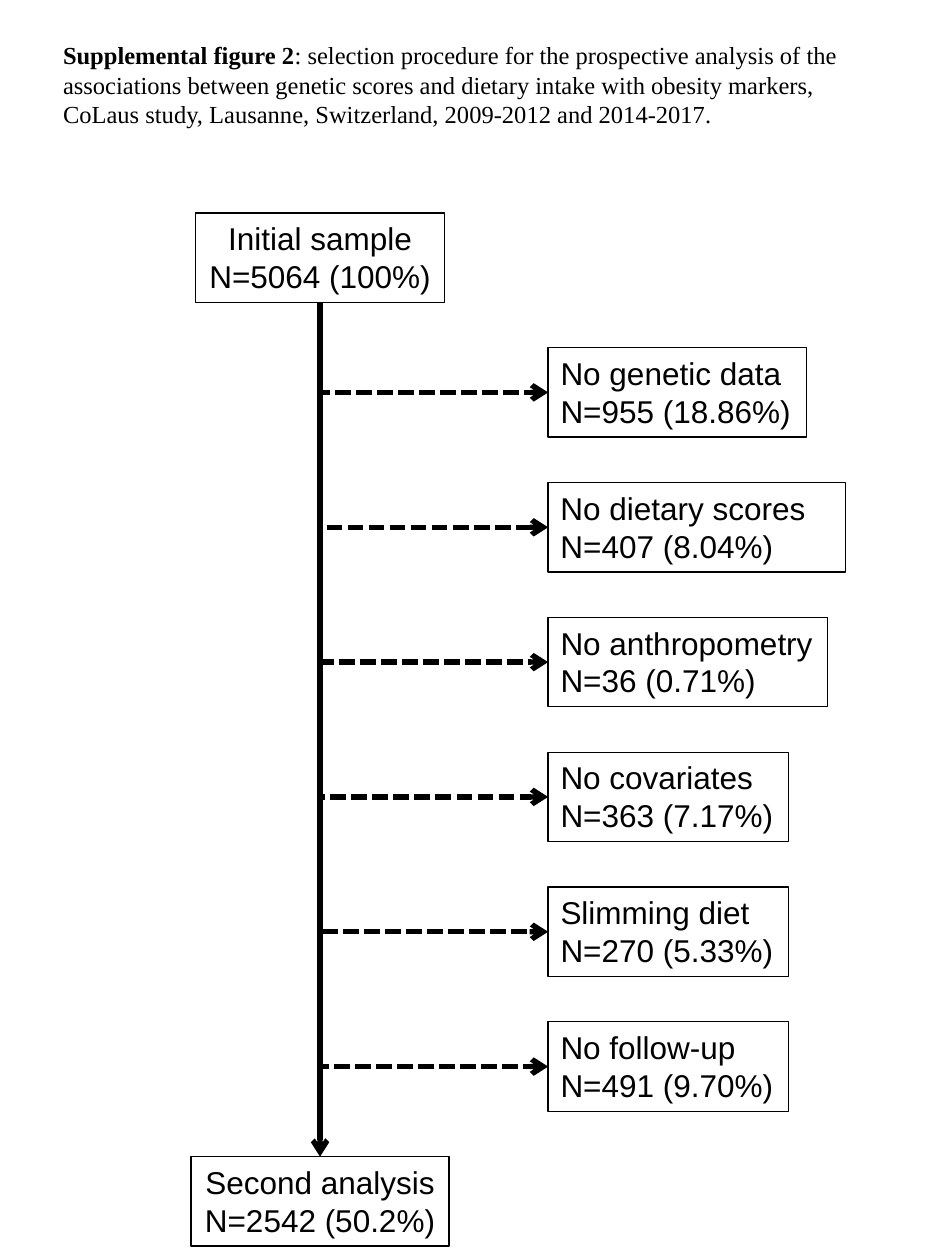
from pptx import Presentation
from pptx.dml.color import RGBColor as Rgb
from pptx.enum.dml import MSO_LINE as Dash
from pptx.enum.shapes import MSO_CONNECTOR as Link, MSO_SHAPE as Shape
from pptx.enum.text import MSO_ANCHOR as Anchor, MSO_AUTO_SIZE as Fit, PP_ALIGN as Align
from pptx.oxml.ns import qn
from pptx.util import Inches, Pt
from lxml.etree import SubElement as Sub

HUES = {"ink": "000000", "page": "FFFFFF"}
INK = Rgb.from_string(HUES["ink"])
PAGE = (7.5, 10)
TOP, STEP, TALL = 1.69, 1.07, 0.71   # rows of the flow chart
AXIS, SIDE = 2.54, 4.35              # middle of main column, left of exits
BOTTOM, LEFT, TIP = 2, 1, 0          # connection sites of a box

HEAD = ("Supplemental figure 2",
        ": selection procedure for the prospective analysis of the associations "
        "between genetic scores and dietary intake with obesity markers, CoLaus "
        "study, Lausanne, Switzerland, 2009-2012 and 2014-2017.")
FIRST = ("Initial sample", "N=5064 (100%)", 1.98)
LAST = ("Second analysis", "N=2542 (50.2%)", 2.05)
EXITS = [
    ("No genetic data", "N=955 (18.86%)", 2.05),
    ("No dietary scores", "N=407 (8.04%)", 2.36),
    ("No anthropometry", "N=36 (0.71%)", 2.22),
    ("No covariates", "N=363 (7.17%)", 1.91),
    ("Slimming diet", "N=270 (5.33%)", 1.91),
    ("No follow-up", "N=491 (9.70%)", 1.91),
]


def style(item, **vals):
    for key, val in vals.items():
        setattr(item, key, val)


def write(para, text, face, size, bold=False):
    run = para.add_run()
    run.text = text
    style(run.font, name=face, size=Pt(size), bold=bold)
    run.font.color.rgb = INK


def title(slide, x, y, w, h):
    head = slide.shapes.title
    style(head, left=Inches(x), top=Inches(y), width=Inches(w), height=Inches(h))
    style(head.text_frame, word_wrap=True, vertical_anchor=Anchor.TOP,
          auto_size=Fit.SHAPE_TO_FIT_TEXT)
    para = head.text_frame.paragraphs[0]
    style(para, alignment=Align.LEFT, space_before=Pt(12), space_after=Pt(8))
    for text, bold in zip(HEAD, (True, False)):
        write(para, text, "Times New Roman", 14, bold)


def box(slide, x, row, lines, w, align):
    item = slide.shapes.add_shape(
        Shape.RECTANGLE, Inches(x), Inches(TOP + row * STEP), Inches(w), Inches(TALL))
    item.shadow.inherit = False
    item.fill.background()
    item.line.color.rgb = INK
    item.line.width = Pt(0.75)
    frame = item.text_frame
    style(frame, word_wrap=False, vertical_anchor=Anchor.TOP,
          auto_size=Fit.SHAPE_TO_FIT_TEXT)
    for i, text in enumerate(lines):
        para = frame.add_paragraph() if i else frame.paragraphs[0]
        para.alignment = align
        write(para, text, "Arial", 18)
    return item


def arrow(slide, kind, start, end, site, dash=None):
    link = slide.shapes.add_connector(kind, 0, 0, 0, 0)
    link.begin_connect(start, BOTTOM)
    link.end_connect(end, site)
    style(link.line, width=Pt(3), dash_style=dash)
    link.line.color.rgb = INK
    props = link._element.spPr
    Sub(props.find(qn("a:ln")), qn("a:tailEnd"), type="arrow")
    Sub(props, qn("a:effectLst"))
    return link


def bend(link):
    """Turn an elbow so that it runs down first, then right."""
    x, y, w, h = link.left, link.top, link.width, link.height
    style(link, left=x + (w - h) // 2, top=y + (h - w) // 2, width=h, height=w)
    props = link._element.spPr
    props.find(qn("a:prstGeom")).set("prst", "bentConnector2")
    form = props.find(qn("a:xfrm"))
    form.set("rot", "16200000")
    form.set("flipH", "1")


def flow(slide):
    # Main column
    ends = []
    for row, (name, count, w) in ((0, FIRST), (len(EXITS) + 1, LAST)):
        ends.append(box(slide, AXIS - w / 2, row, (name, count), w, Align.CENTER))
    arrow(slide, Link.STRAIGHT, *ends, TIP)
    # Exclusions
    for row, (name, count, w) in enumerate(EXITS, 1):
        out = box(slide, SIDE, row, (name, count), w, Align.LEFT)
        bend(arrow(slide, Link.ELBOW, ends[0], out, LEFT, Dash.SQUARE_DOT))


def main():
    deck = Presentation()
    style(deck, slide_width=Inches(PAGE[0]), slide_height=Inches(PAGE[1]))
    slide = deck.slides.add_slide(deck.slide_layouts[5])
    fill = slide.background.fill
    fill.solid()
    fill.fore_color.rgb = Rgb.from_string(HUES["page"])
    title(slide, 0.4, 0.27, 6.69, 0.81)
    flow(slide)
    deck.save("out.pptx")


if __name__ == "__main__":
    main()
